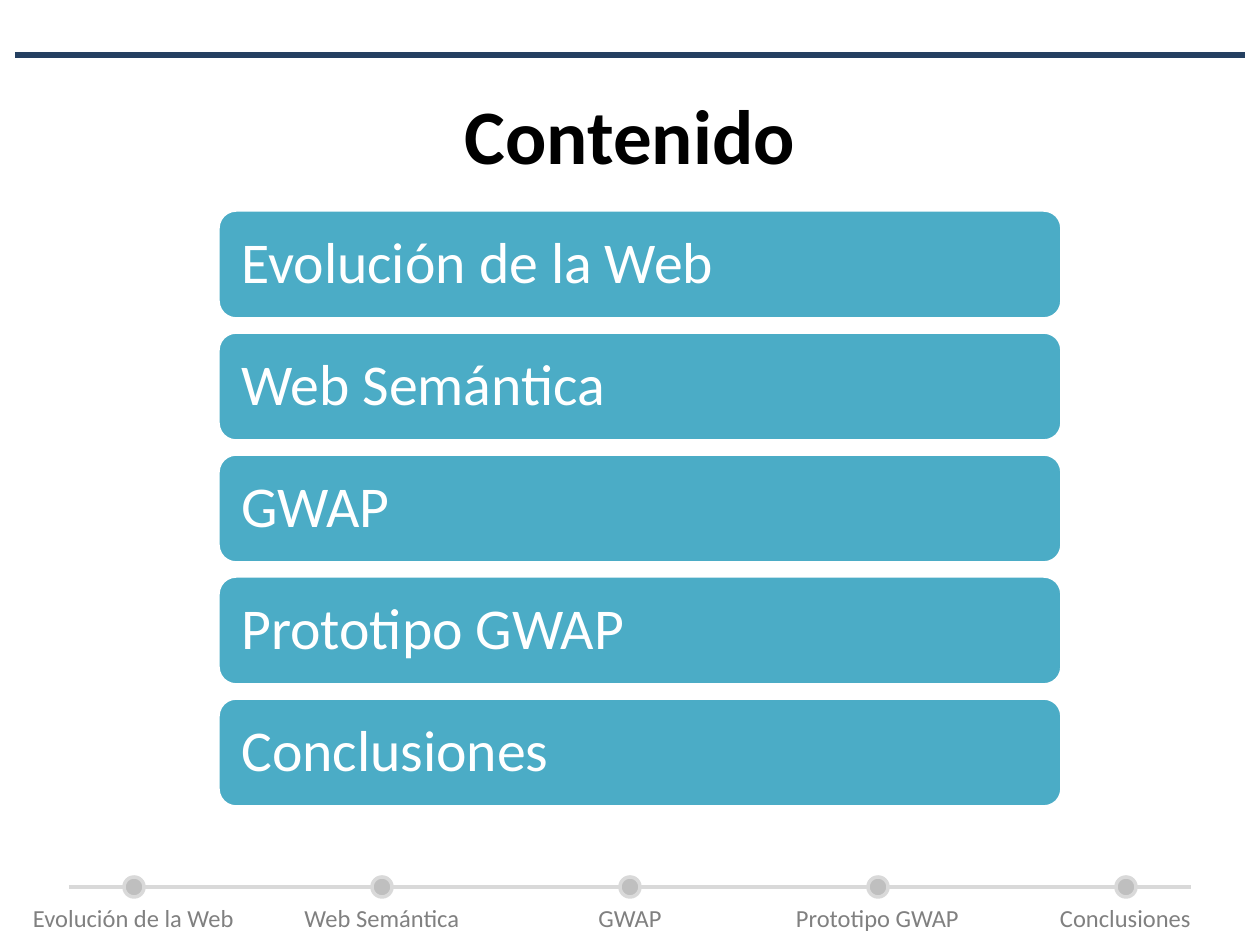
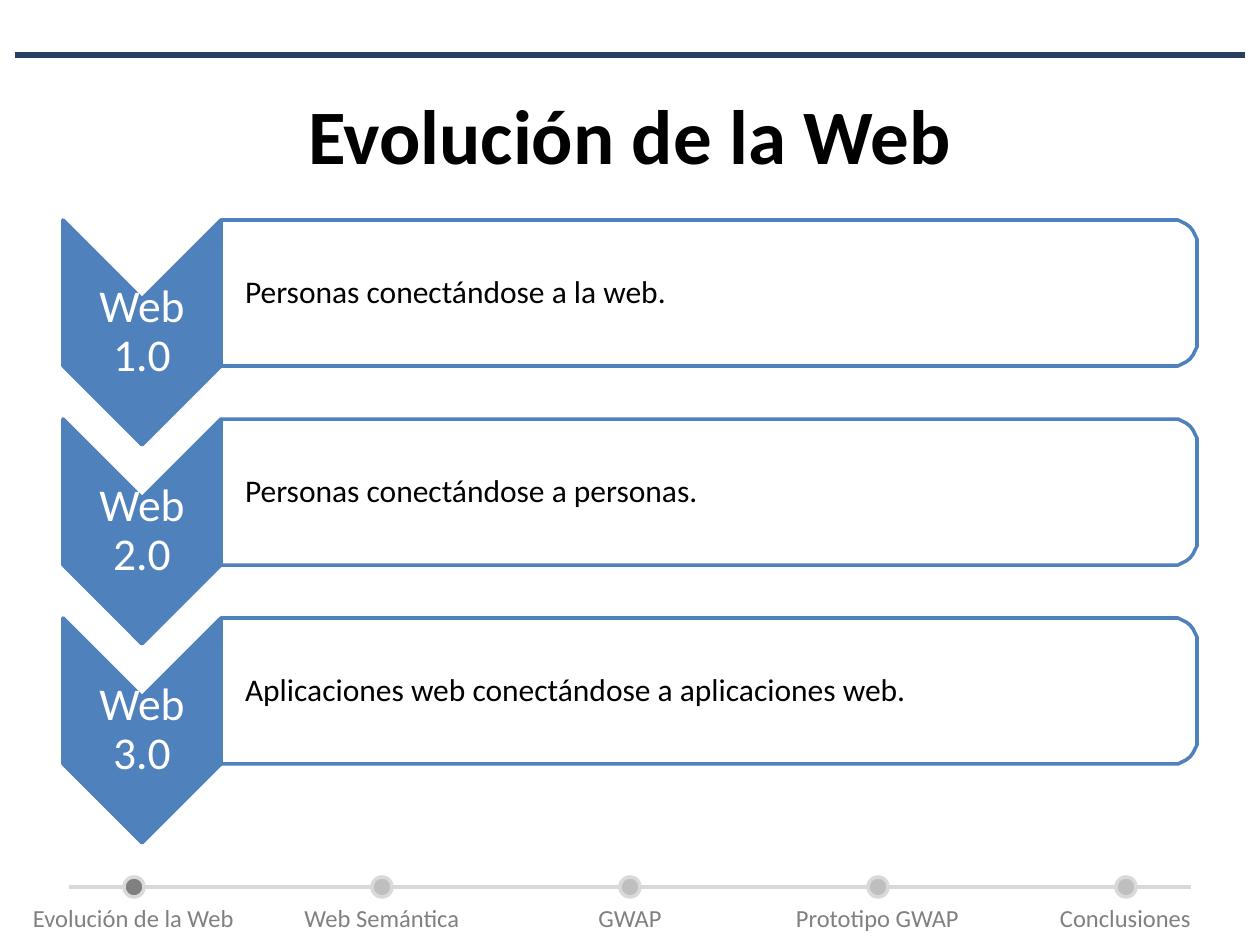
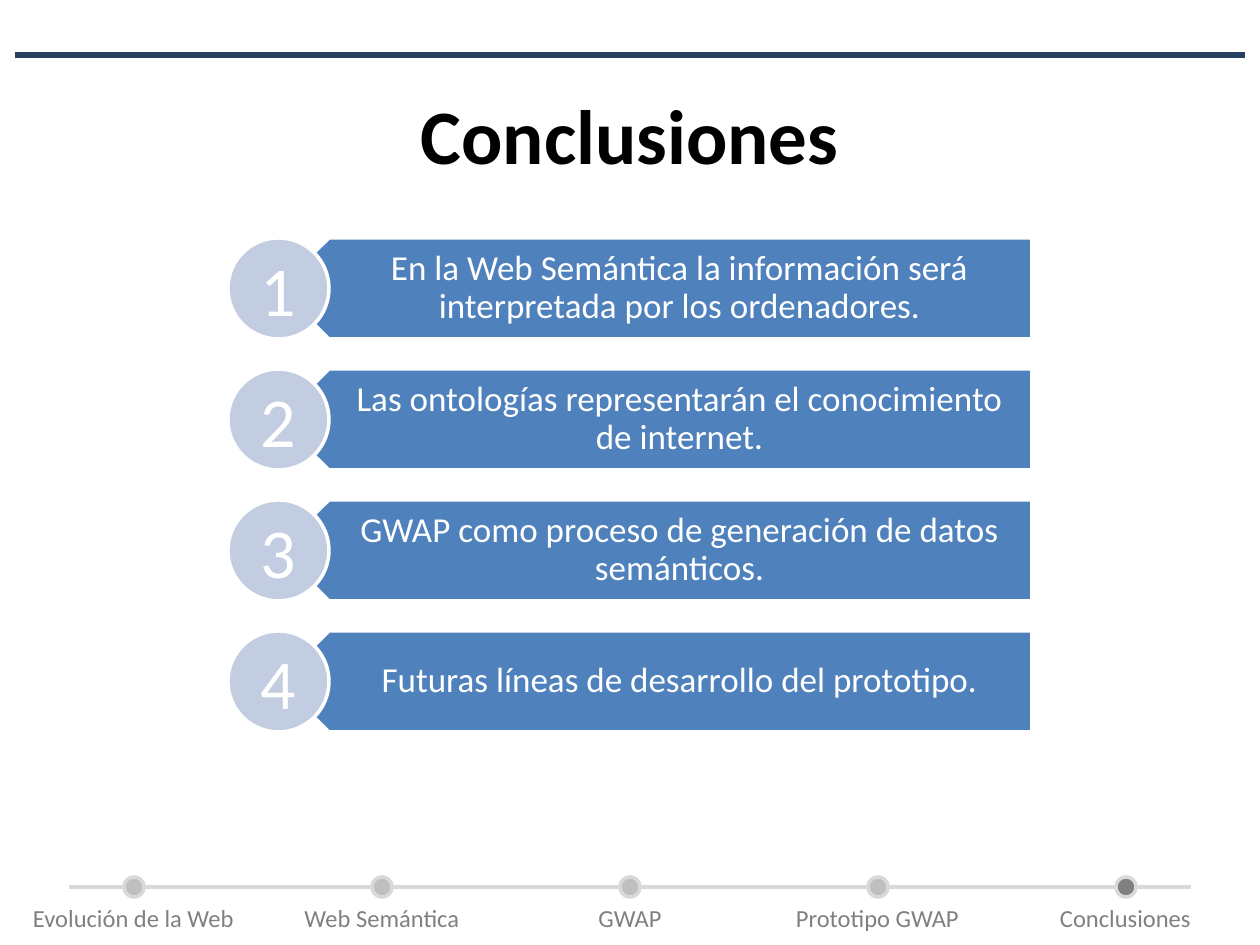
from math import cos, pi, sin

from lxml import etree
from pptx import Presentation
from pptx import util as u
from pptx.dml.color import RGBColor
from pptx.enum import shapes, text
from pptx.oxml.ns import qn

# Content
SECTIONS = [  # label, width of its footer box
    ("Evolución de la Web", 228),
    ("Web Semántica", 181),
    ("GWAP", 89),
    ("Prototipo GWAP", 190),
    ("Conclusiones", 158),
]
WEB_STAGES = [
    ("Web 1.0", "Personas conectándose a la web."),
    ("Web 2.0", "Personas conectándose a personas."),
    ("Web 3.0", "Aplicaciones web conectándose a aplicaciones web."),
]
CONCLUSIONS = [
    "En la Web Semántica la información será interpretada por los ordenadores.",
    "Las ontologías representarán el conocimiento de internet.",
    "GWAP como proceso de generación de datos semánticos.",
    "Futuras líneas de desarrollo del prototipo.",
]

# Shared style
COLORS = {
    "rule": "254061", "title": "000000", "white": "FFFFFF",
    "aqua": "4BACC6", "blue": "4F81BD", "pale": "C2CDE1",
    "track": "D9D9D9", "dot": "BFBFBF", "active": "808080", "label": "808080",
}
FONT = "Calibri"
SCALE = 914400 / 126
LEFT, CENTER = text.PP_ALIGN.LEFT, text.PP_ALIGN.CENTER


def px(length):
    return u.Emu(round(length * SCALE))


def color(name):
    return RGBColor.from_string(COLORS[name])


def write(shape, words, size, ink, align=LEFT, insets=(0, 0, 0, 0), spacing=0.9, bold=False):
    frame = shape.text_frame
    frame.word_wrap = True
    frame.vertical_anchor = text.MSO_ANCHOR.MIDDLE
    frame.margin_left, frame.margin_top, frame.margin_right, frame.margin_bottom = map(px, insets)
    frame.text = words
    line = frame.paragraphs[0]
    line.alignment, line.line_spacing = align, spacing
    font = line.runs[0].font
    font.name, font.size, font.bold = FONT, u.Pt(size), bold
    font.color.rgb = color(ink)


def paint(shape, fill, outline):
    shape.shadow.inherit = False
    shape.fill.solid()
    shape.fill.fore_color.rgb = color(fill)
    shape.line.color.rgb = color(outline)
    shape.line.width = u.Pt(2)
    return shape


def preset(slide, kind, left, top, width, height, fill, outline):
    shape = slide.shapes.add_shape(kind, px(left), px(top), px(width), px(height))
    return paint(shape, fill, outline)


def polygon(slide, points, fill, outline):
    builder = slide.shapes.build_freeform(*points[0], scale=SCALE)
    builder.add_line_segments(points[1:], close=True)
    return paint(builder.convert_to_shape(), fill, outline)


def rule(slide, left, right, y, ink, weight):
    line = slide.shapes.add_connector(
        shapes.MSO_CONNECTOR.STRAIGHT, px(left), px(y), px(right), px(y))
    line.line.color.rgb = color(ink)
    line.line.width = u.Pt(weight)
    etree.SubElement(line._element.spPr, qn("a:effectLst"))


def add_header(slide, title):
    rule(slide, 15, 1245, 55, "rule", 3)
    box = slide.shapes.add_textbox(px(63), px(55), px(1134), px(158))
    write(box, title, 44, "title", CENTER, (13, 6, 13, 6), 1.0, True)


def add_footer(slide, current=None):
    track_y, first, pitch, size = 887, 134, 248, 20
    rule(slide, 69, 1191, track_y, "track", 2.25)
    centers = [first + pitch * i for i in range(len(SECTIONS))]
    for center, (section, _) in zip(centers, SECTIONS):
        preset(slide, shapes.MSO_SHAPE.OVAL, center - size / 2, track_y - size / 2, size, size,
               "active" if section == current else "dot", "track")
    for center, (section, width) in zip(centers, SECTIONS):
        label = slide.shapes.add_textbox(px(center - width / 2), px(896), px(width), px(43))
        write(label, section, 14, "label", insets=(13, 6, 13, 6), spacing=1.0)
        label.text_frame.word_wrap = False


# Slide bodies
def add_contents(slide):
    for i, (section, _) in enumerate(SECTIONS):
        bar = preset(slide, shapes.MSO_SHAPE.ROUNDED_RECTANGLE,
                     218, 210 + 122 * i, 844, 109, "aqua", "white")
        write(bar, section, 33, "white", insets=(18, 18, 18, 18))


def add_web_stages(slide):
    left, middle, right = 63, 221, 1197
    height, point, radius, steps = 146, 79, 24, 8
    tip = (left + middle) / 2
    for i, (stage, meaning) in enumerate(WEB_STAGES):
        top = 220 + 199 * i
        bottom = top + height
        chevron = polygon(slide, [
            (middle, top), (middle, bottom), (tip, bottom + point),
            (left, bottom), (left, top), (tip, top + point)], "blue", "blue")
        write(chevron, stage, 26, "white", CENTER, (10, 80, 10, 80))

        # Right corners are quarter circles
        turns = [pi / 2 * step / steps for step in range(steps + 1)]
        upper = [(right - radius + radius * sin(a), top + radius - radius * cos(a)) for a in turns]
        lower = [(x, top + bottom - y) for x, y in reversed(upper)]
        panel = polygon(slide, [(middle, top), *upper, *lower, (middle, bottom)], "white", "blue")
        fill = panel._element.spPr.find(qn("a:solidFill"))
        etree.SubElement(fill[0], qn("a:alpha"), val="90000")
        write(panel, meaning, 18, "title", insets=(24, 9, 9, 9))


def add_conclusions(slide):
    left, size, right = 228, 101, 1032
    tip = left + size / 2
    for i, conclusion in enumerate(CONCLUSIONS):
        top = 238 + 131 * i
        bottom = top + size
        bar = polygon(slide, [
            (right, bottom), (left + size, bottom), (tip, top + size / 2),
            (left + size, top), (right, top)], "blue", "white")
        write(bar, conclusion, 20, "white", CENTER, (69, 10, 20, 10))
        badge = preset(slide, shapes.MSO_SHAPE.OVAL, left, top, size, size, "pale", "white")
        write(badge, str(i + 1), 40, "white", CENTER, spacing=1.0)


def main():
    deck = Presentation()
    deck.slide_width, deck.slide_height = px(1260), px(945)
    for title, add_body in [
        ("Contenido", add_contents),
        ("Evolución de la Web", add_web_stages),
        ("Conclusiones", add_conclusions),
    ]:
        slide = deck.slides.add_slide(deck.slide_layouts[6])
        add_header(slide, title)
        add_body(slide)
        add_footer(slide, title)
    deck.save("out.pptx")


if __name__ == "__main__":
    main()
